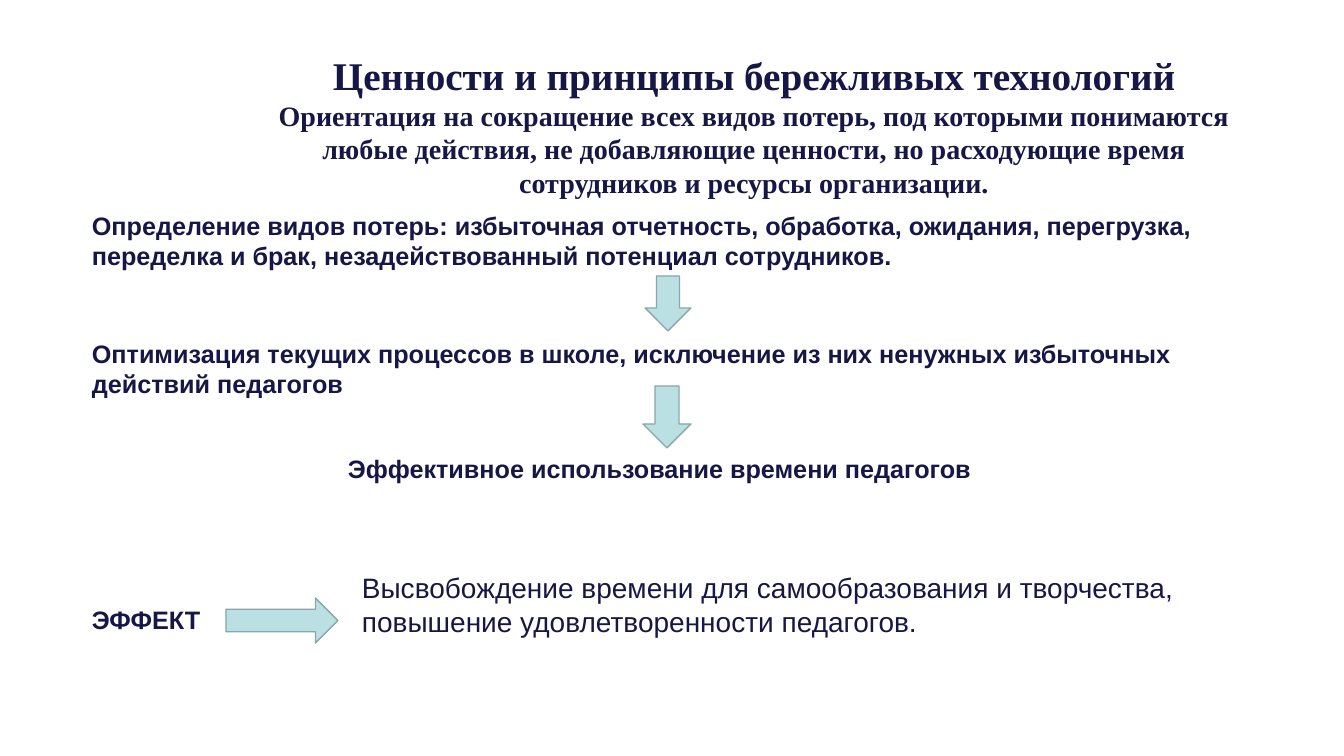
from pptx import Presentation
from pptx import util as u
from pptx.dml.color import RGBColor
from pptx.enum import shapes, text

NAVY = RGBColor(0x17, 0x17, 0x45)
AQUA = RGBColor(0xBB, 0xE0, 0xE3)
TEAL_GREY = RGBColor(0x8A, 0xA6, 0xA8)
SLIDE_W, SLIDE_H = 1344, 756
EMU_PER_PX = 12192000 / SLIDE_W
LEFT = 82


def px(n):
    return u.Emu(round(n * EMU_PER_PX))


def box(*lengths):
    return [px(n) for n in lengths]


def add_run(p, content, size=18, font="Arial", bold=True):
    r = p.add_run()
    r.text = content
    r.font.size = u.Pt(size)
    r.font.name = font
    r.font.bold = bold
    r.font.color.rgb = NAVY


def set_title(s, at, heading, subheading):
    sp = s.shapes.title
    sp.left, sp.top, sp.width, sp.height = box(*at)
    tf = sp.text_frame
    tf.word_wrap = True
    tf.auto_size = text.MSO_AUTO_SIZE.NONE
    tf.vertical_anchor = text.MSO_ANCHOR.BOTTOM
    tf.margin_left = tf.margin_right = px(19)
    tf.margin_top = tf.margin_bottom = px(9)
    p = tf.paragraphs[0]
    p.alignment = text.PP_ALIGN.CENTER
    add_run(p, heading, size=28, font="Times New Roman")
    p.add_line_break()
    add_run(p, subheading, size=20, font="Times New Roman")


def add_text(s, at, content, wrap=True, **style):
    tf = s.shapes.add_textbox(*box(*at)).text_frame
    tf.word_wrap = wrap
    tf.auto_size = text.MSO_AUTO_SIZE.SHAPE_TO_FIT_TEXT
    add_run(tf.paragraphs[0], content, **style)


def add_arrow(s, kind, at):
    sp = s.shapes.add_shape(kind, *box(*at))
    sp.shadow.inherit = False
    sp.fill.solid()
    sp.fill.fore_color.rgb = AQUA
    sp.line.color.rgb = TEAL_GREY
    sp.line.width = u.Pt(1)


def main():
    prs = Presentation()
    prs.slide_width, prs.slide_height = box(SLIDE_W, SLIDE_H)
    s = prs.slides.add_slide(prs.slide_layouts[5])
    down = shapes.MSO_SHAPE.DOWN_ARROW
    right = shapes.MSO_SHAPE.RIGHT_ARROW

    set_title(s, (250, 119, 1008, 89),
              "Ценности и принципы бережливых технологий",
              "Ориентация на сокращение всех видов потерь, под которыми "
              "понимаются любые действия, не добавляющие ценности, но "
              "расходующие время сотрудников и ресурсы организации.")

    add_text(s, (LEFT, 205, 1179, 72),
             "Определение видов потерь: избыточная отчетность, обработка, "
             "ожидания, перегрузка, переделка и брак, незадействованный "
             "потенциал сотрудников.")
    add_arrow(s, down, (645, 276, 46, 55))
    add_text(s, (LEFT, 333, 1161, 72),
             "Оптимизация текущих процессов в школе, исключение из них "
             "ненужных избыточных действий педагогов")
    add_arrow(s, down, (643, 386, 48, 62))
    add_text(s, (338, 448, 657, 40),
             "Эффективное использование времени педагогов", wrap=False)

    add_text(s, (LEFT, 599, 130, 40), "ЭФФЕКТ", wrap=False)
    add_arrow(s, right, (226, 598, 112, 45))
    add_text(s, (352, 566, 891, 78),
             "Высвобождение времени для самообразования и творчества, "
             "повышение удовлетворенности педагогов.", size=20, bold=False)

    prs.save("out.pptx")


if __name__ == "__main__":
    main()
